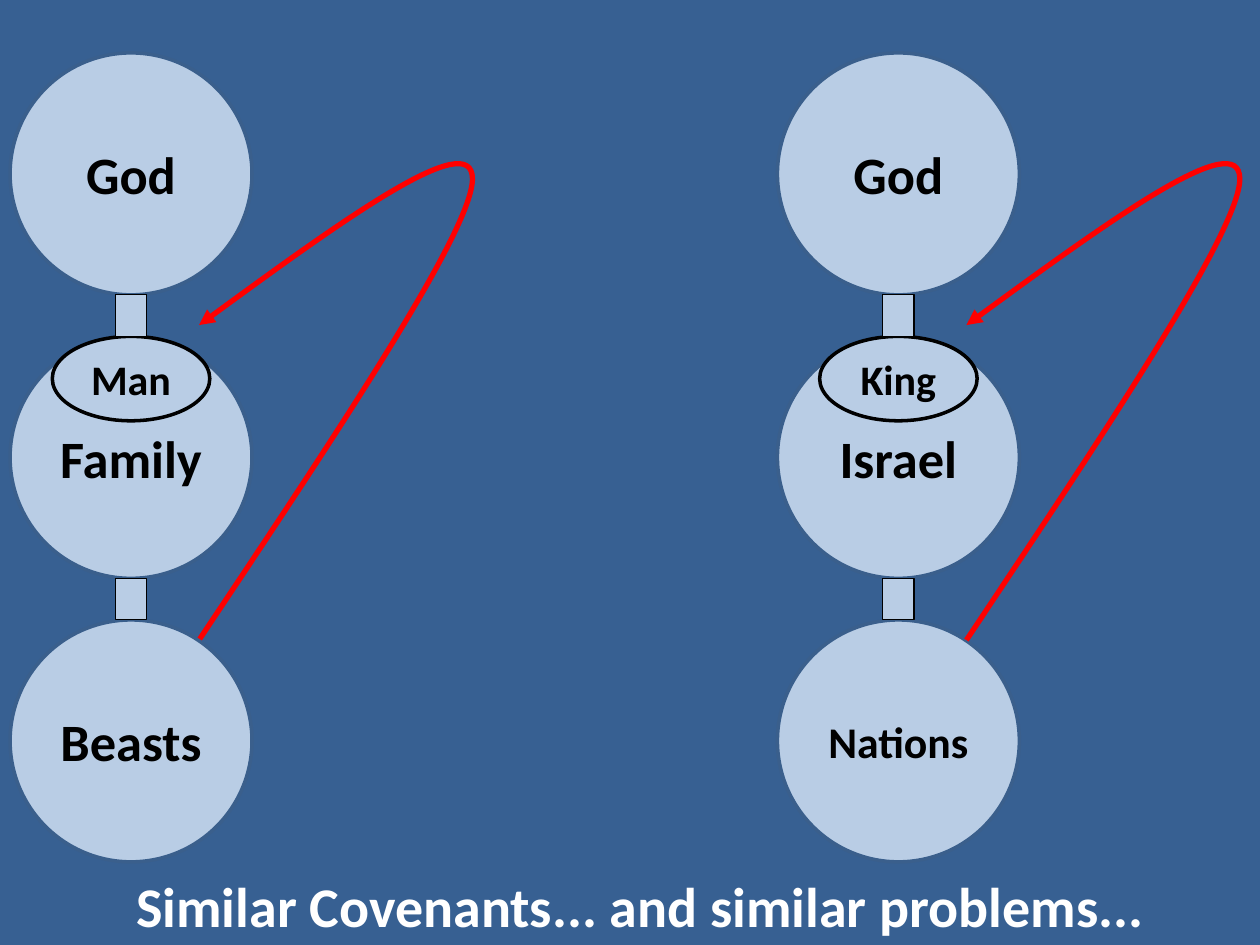
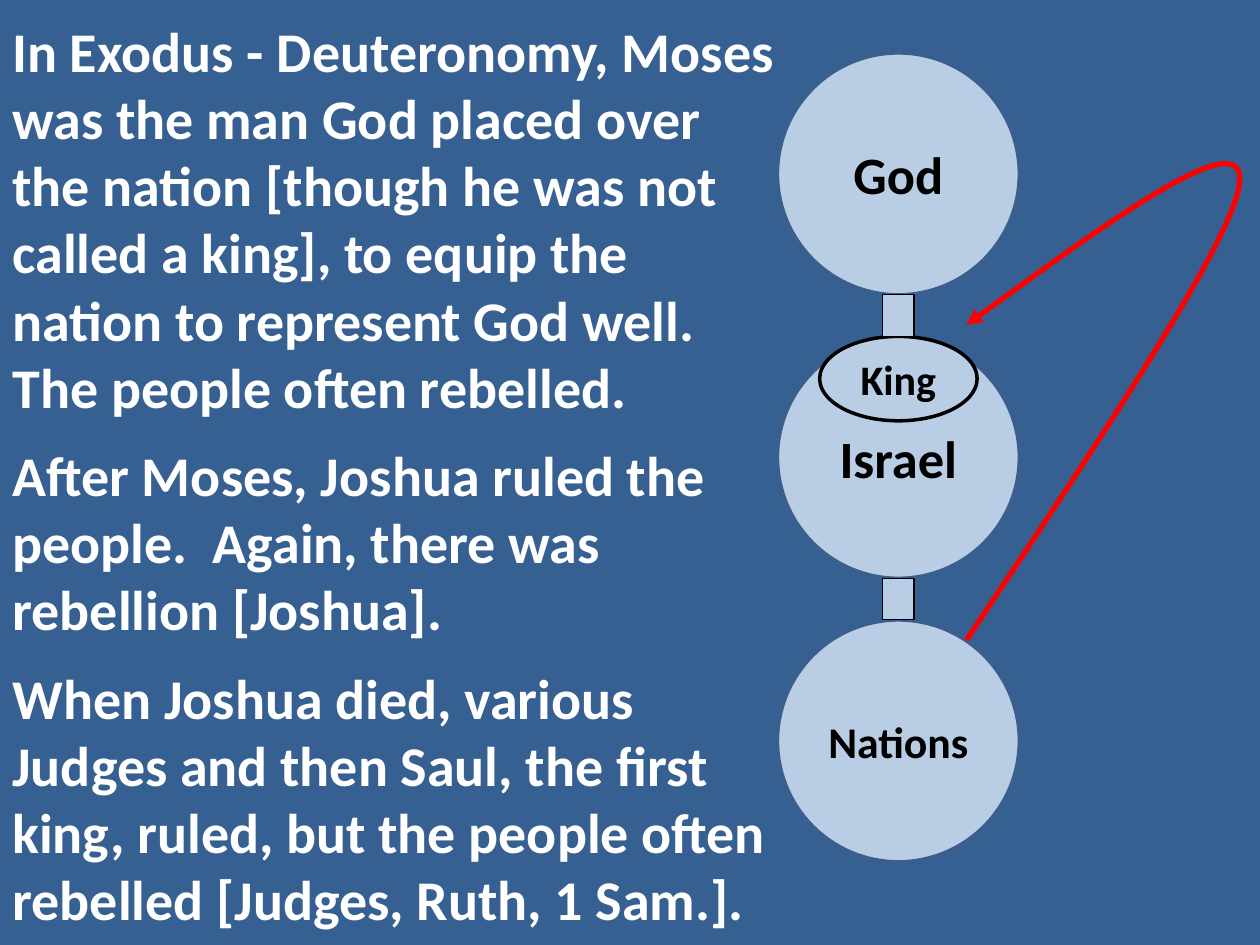
import dataclasses
import lxml.etree
import pptx
import pptx.dml.color
import pptx.enum.shapes
import pptx.enum.text
import pptx.oxml.ns
import pptx.util

Inches = pptx.util.Inches
Pt = pptx.util.Pt
Kind = pptx.enum.shapes.MSO_SHAPE
Align = pptx.enum.text.PP_ALIGN
Anchor = pptx.enum.text.MSO_ANCHOR
Fit = pptx.enum.text.MSO_AUTO_SIZE
qn = pptx.oxml.ns.qn


@dataclasses.dataclass(frozen=True)
class Theme:
    back: str = "376092"
    disc: str = "B9CDE5"
    rim: str = "3A5F8C"
    ink: str = "000000"
    light: str = "FFFFFF"
    arrow: str = "FF0000"
    font: str = "Calibri"
    body: int = 32
    label: int = 30
    small: int = 25
    cap: int = 24


THEME = Theme()
TOP = 0.42
SIZE = 1.92
STEP = 2.25
LEFT, RIGHT = 0.08, 6.17
CURVE = [(0, 4.08), (1.08, 2.46), (2.17, 0.83), (2.17, 0.42),
         (2.17, 0), (1.08, 0.79), (0, 1.58)]
NATION = [("God", THEME.label), ("Israel", THEME.label), ("Nations", THEME.small)]
FAMILY = [(name, THEME.label) for name in ("God", "Family", "Beasts")]
STORY = [
    "In Exodus - Deuteronomy, Moses was the man God placed over the nation "
    "[though he was not called a king], to equip the nation to represent God "
    "well.  The people often rebelled.",
    "After Moses, Joshua ruled the people.  Again, there was rebellion [Joshua].",
    "When Joshua died, various Judges and then Saul, the first king, ruled, "
    "but the people often rebelled [Judges, Ruth, 1 Sam.].",
]


def rgb(color):
    return pptx.dml.color.RGBColor.from_string(color)


def apply(target, values):
    for name, value in values.items():
        setattr(target, name, value)


def write(frame, lines, size, color, align, gap=0):
    for i, line in enumerate(lines):
        para = frame.paragraphs[0] if i == 0 else frame.add_paragraph()
        apply(para, {"alignment": align, "space_before": Pt(gap if i else 0)})
        run = para.add_run()
        run.text = line
        apply(run.font, {"name": THEME.font, "size": Pt(size), "bold": True})
        run.font.color.rgb = rgb(color)


def stroke(shape, color, width):
    shape.shadow.inherit = False
    shape.line.color.rgb = rgb(color)
    shape.line.width = Pt(width)


def block(group, kind, box, rim, width, label="", size=0):
    shape = group.shapes.add_shape(kind, *map(Inches, box))
    shape.fill.solid()
    shape.fill.fore_color.rgb = rgb(THEME.disc)
    stroke(shape, rim, width)
    if label:
        apply(shape.text_frame, {"word_wrap": False, "vertical_anchor": Anchor.MIDDLE})
        write(shape.text_frame, [label], size, THEME.ink, Align.CENTER)


def chain(slide, left, discs, ruler):
    group = slide.shapes.add_group_shape()
    mid = left + SIZE / 2
    for i, (label, size) in enumerate(discs):
        block(group, Kind.OVAL, (left, TOP + i * STEP, SIZE, SIZE),
              THEME.rim, 2, label, size)
    block(group, Kind.OVAL, (mid - 0.625, TOP + STEP, 1.25, 0.67),
          THEME.ink, 2, ruler, THEME.cap)
    for i in range(len(discs) - 1):
        block(group, Kind.RECTANGLE,
              (mid - 0.125, TOP + SIZE + i * STEP, 0.25, STEP - SIZE),
              THEME.ink, 0.75)


def revolt(slide, left):
    start, *rest = [(Inches(left + 1.5 + x), Inches(TOP + 0.58 + y)) for x, y in CURVE]
    pen = slide.shapes.build_freeform(*start)
    pen.add_line_segments(rest, close=False)
    shape = pen.convert_to_shape()
    shape.fill.background()
    stroke(shape, THEME.arrow, 3)
    lines = list(shape.element.iter(qn("a:lnTo")))
    track = lines[0].getparent()
    for i in range(0, len(lines), 3):
        bend = lxml.etree.SubElement(track, qn("a:cubicBezTo"))
        for line in lines[i:i + 3]:
            bend.append(line[0])
            track.remove(line)
    ln = shape.line._get_or_add_ln()
    lxml.etree.SubElement(ln, qn("a:tailEnd"), type="triangle")


def prose(slide, box, lines, align):
    frame = slide.shapes.add_textbox(*map(Inches, box)).text_frame
    apply(frame, {"word_wrap": True, "auto_size": Fit.SHAPE_TO_FIT_TEXT})
    write(frame, lines, THEME.body, THEME.light, align, 12)


def blank(deck):
    slide = deck.slides.add_slide(deck.slide_layouts[6])
    fill = slide.background.fill
    fill.solid()
    fill.fore_color.rgb = rgb(THEME.back)
    return slide


def pair(deck):
    slide = blank(deck)
    revolt(slide, LEFT)
    chain(slide, LEFT, FAMILY, "Man")
    chain(slide, RIGHT, NATION, "King")
    revolt(slide, RIGHT)
    prose(slide, (0.67, 6.87, 8.83, 0.63),
          ["Similar Covenants... and similar problems..."], Align.CENTER)


def story(deck):
    slide = blank(deck)
    chain(slide, RIGHT, NATION, "King")
    revolt(slide, RIGHT)
    prose(slide, (0, 0.08, 6.25, 7.44), STORY, Align.LEFT)


def main():
    deck = pptx.Presentation()
    apply(deck, {"slide_width": Inches(10), "slide_height": Inches(7.5)})
    pair(deck)
    story(deck)
    deck.save("out.pptx")


if __name__ == "__main__":
    main()
